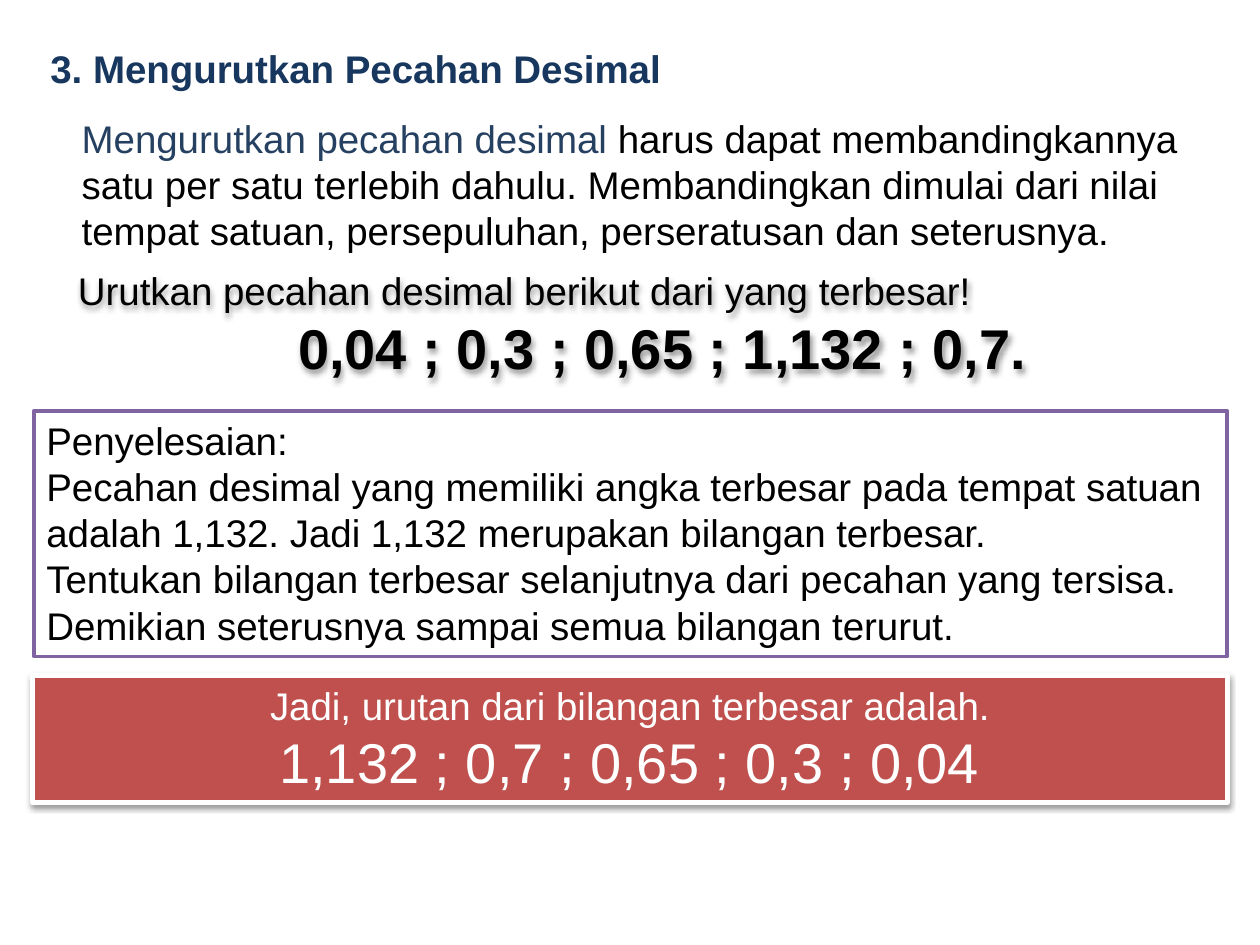
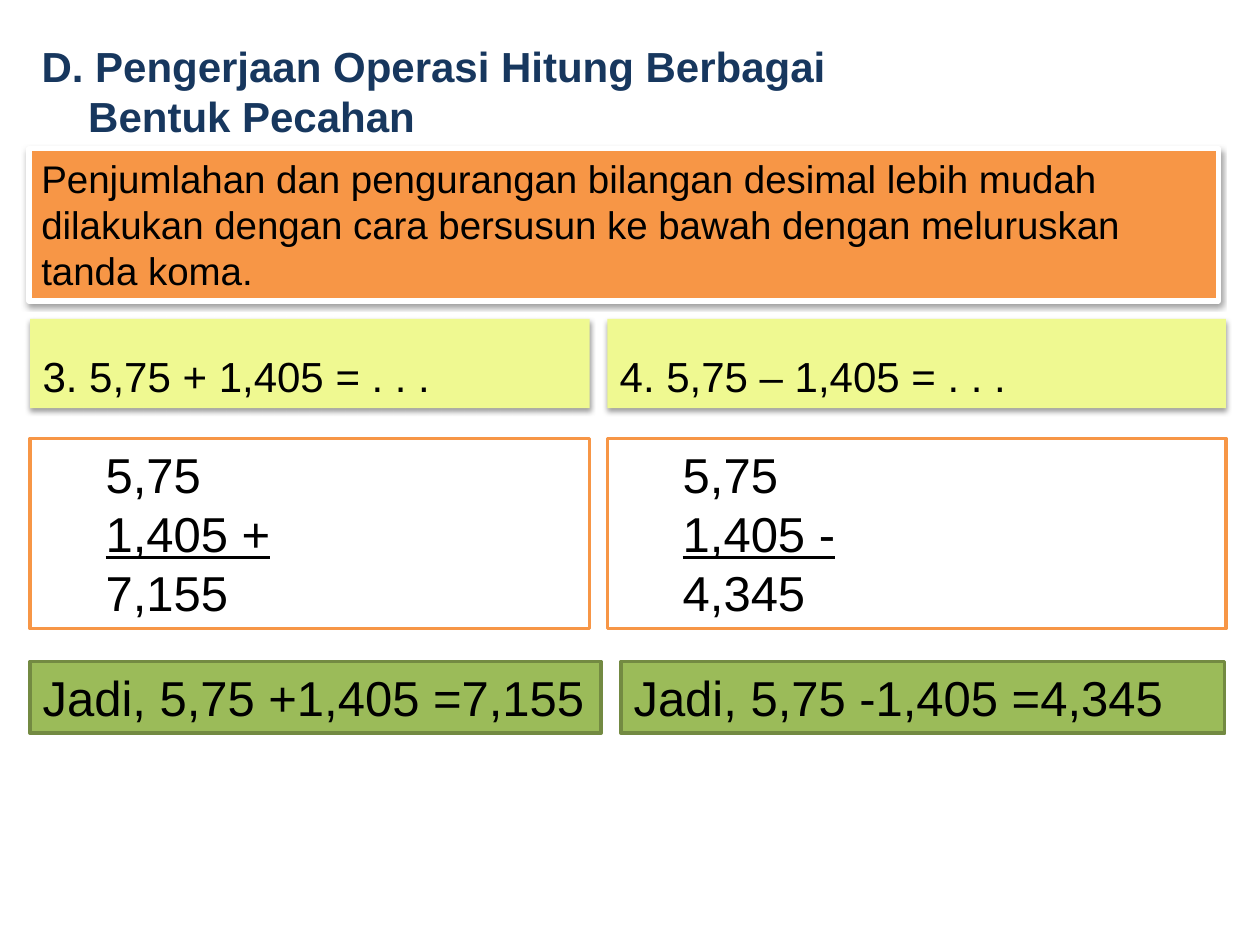
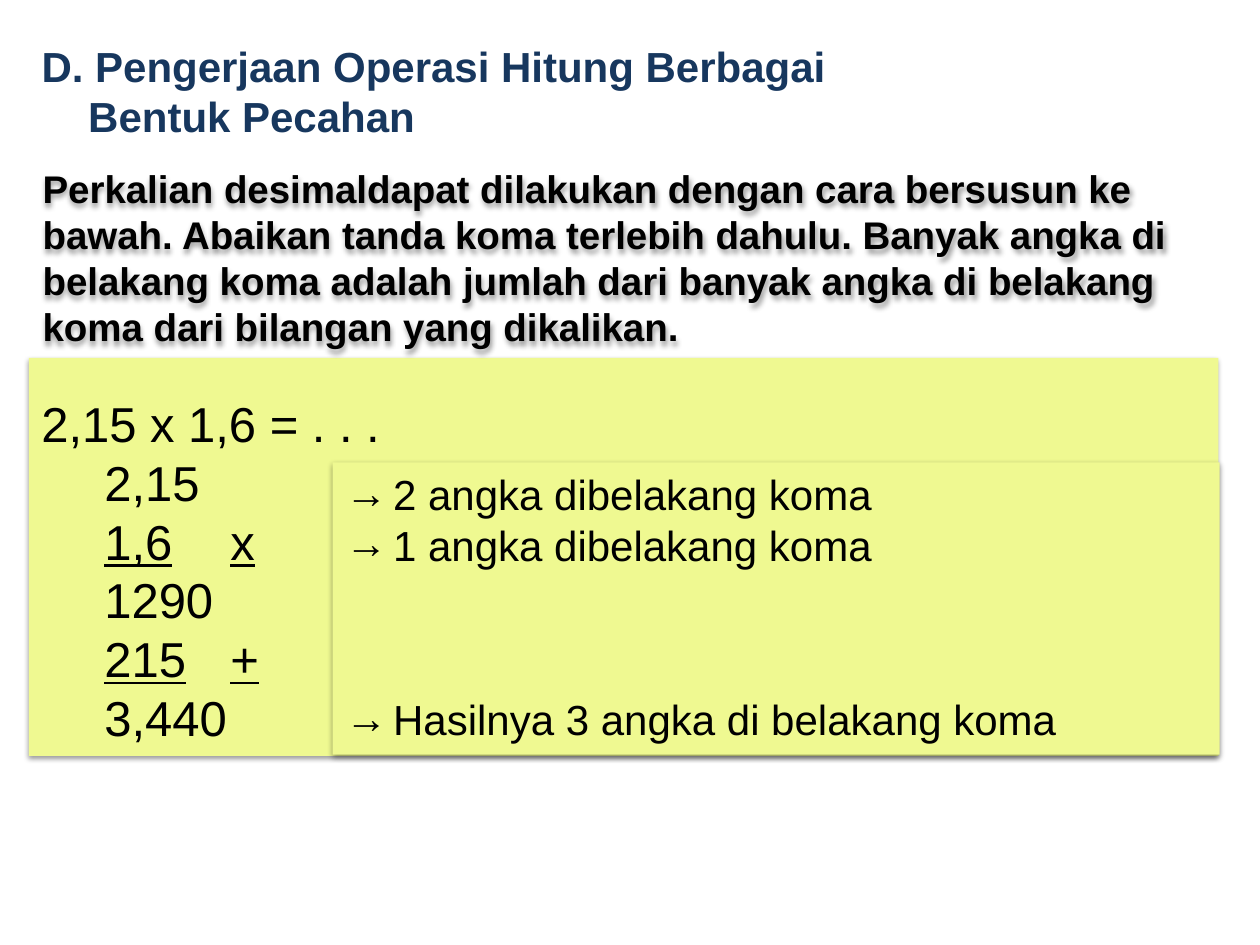
from collections import namedtuple

from lxml.etree import SubElement
from pptx import Presentation
from pptx.dml.color import RGBColor
from pptx.enum.shapes import MSO_SHAPE as Preset
from pptx.enum.text import MSO_ANCHOR as Anchor, MSO_AUTO_SIZE as AutoSize, PP_ALIGN as Align
from pptx.oxml.ns import qn
from pptx.util import Inches, Pt

COLORS = {
    "title": "17375E", "term": "254061", "text": "000000", "white": "FFFFFF",
    "purple": "8064A2", "red": "C0504D", "orange": "F79646",
    "yellow": "EFF991", "green": "9BBB59", "dark_green": "738A42",
}
FONT = "Arial"
COLUMNS, ROWS = 100, 75
WIDTH, HEIGHT = Inches(10), Inches(7.5)
CHAPTER = ["D. Pengerjaan Operasi Hitung Berbagai", "Bentuk Pecahan"]

# Boxes are in grid columns and rows; a Step is one line of written arithmetic
Box = namedtuple("Box", "left top width height")
Step = namedtuple("Step", "start text underline sign_at", defaults=(False, None))


def color(name):
    return RGBColor.from_string(COLORS[name])


def place(shape, box):
    shape.left, shape.width = (int(n * WIDTH / COLUMNS) for n in (box.left, box.width))
    shape.top, shape.height = (int(n * HEIGHT / ROWS) for n in (box.top, box.height))


def inside(box, left, top, width, height):
    """Box whose corner is counted from the corner of another box."""
    return Box(box.left + left, box.top + top, width, height)


def prepare_frame(shape):
    frame = shape.text_frame
    frame.word_wrap = True
    frame.auto_size = AutoSize.NONE
    frame.vertical_anchor = Anchor.TOP
    return frame


def style(paragraph, size, name="text", bold=False, align=Align.LEFT):
    paragraph.alignment = align
    paragraph.space_before = Pt(0)
    font = paragraph.font
    font.name, font.size, font.bold = FONT, Pt(size), bold
    font.color.rgb = color(name)


def write(shape, lines, size, **options):
    """Fill a shape with equally styled paragraphs and return them."""
    frame = prepare_frame(shape)
    paragraphs = []
    for number, line in enumerate(lines):
        paragraph = frame.add_paragraph() if number else frame.paragraphs[0]
        paragraph.text = line
        style(paragraph, size, **options)
        paragraphs.append(paragraph)
    return paragraphs


def add_shadow(shape):
    properties = shape._element.spPr
    for effects in properties.findall(qn("a:effectLst")):
        properties.remove(effects)
    effects = SubElement(properties, qn("a:effectLst"))
    shadow = SubElement(effects, qn("a:outerShdw"), blurRad=str(Pt(3.1)),
                        dist=str(Pt(1.6)), dir="5400000", rotWithShape="0")
    black = SubElement(shadow, qn("a:srgbClr"), val=COLORS["text"])
    SubElement(black, qn("a:alpha"), val="38000")


def panel(slide, box, fill, line=None, line_width=2, shadow=False):
    shape = slide.shapes.add_shape(Preset.RECTANGLE, 0, 0, 0, 0)
    place(shape, box)
    shape.shadow.inherit = False
    shape.fill.solid()
    shape.fill.fore_color.rgb = color(fill)
    if line:
        shape.line.color.rgb = color(line)
        shape.line.width = Pt(line_width)
    else:
        shape.line.fill.background()
    if shadow:
        add_shadow(shape)
    return shape


def shadowed_text(slide, box, lines, size, **options):
    shape = slide.shapes.add_textbox(0, 0, 0, 0)
    place(shape, box)
    add_shadow(shape)
    return write(shape, lines, size, **options)


def set_indent(paragraph, margin, first=0):
    properties = paragraph._p.get_or_add_pPr()
    properties.set("marL", str(Inches(margin)))
    properties.set("indent", str(Inches(first)))
    return properties


def add_title(slide, box, lines, size, indents):
    title = slide.shapes.title
    place(title, box)
    for paragraph, indent in zip(write(title, lines, size, name="title", bold=True), indents):
        set_indent(paragraph, indent)


def add_chapter_title(slide):
    add_title(slide, Box(2.3, 2.7, 70.5, 9.1), CHAPTER, 24, (0, 0.37))


def write_steps(frame, steps, size):
    """Write arithmetic lines, each one set on its own tab stops."""
    for number, step in enumerate(steps):
        is_first = number == 0 and not frame.paragraphs[0].runs
        paragraph = frame.paragraphs[0] if is_first else frame.add_paragraph()
        properties = set_indent(paragraph, 0)
        SubElement(properties, qn("a:buNone"))
        tabs = SubElement(properties, qn("a:tabLst"))
        for stop in filter(None, (step.start, step.sign_at)):
            SubElement(tabs, qn("a:tab"), pos=str(Inches(stop)), algn="l")
        paragraph.add_run().text = "\t"
        run = paragraph.add_run()
        run.text = step.text
        if step.underline:
            run.font.underline = True
        style(paragraph, size)


# Slide 1: ordering decimals
def ordering_slide(presentation):
    slide = presentation.slides.add_slide(presentation.slide_layouts[5])
    add_title(slide, Box(1.2, 3.1, 66.1, 4.7), ["3. Mengurutkan Pecahan Desimal"], 22, (0.18,))

    # Explanation with a coloured term
    intro = panel(slide, Box(5.5, 8.6, 94.8, 12.1), "white")
    paragraph = write(intro, ["Mengurutkan pecahan desimal "], 22)[0]
    paragraph.runs[0].font.color.rgb = color("term")
    paragraph.add_run().text = (
        "harus dapat membandingkannya satu per satu terlebih dahulu. Membandingkan dimulai "
        "dari nilai tempat satuan, persepuluhan, perseratusan dan seterusnya.")

    # Solution and result
    solution = panel(slide, Box(2.7, 32.6, 94.7, 19.5), "white", "purple")
    write(solution, [
        "Penyelesaian:",
        "Pecahan desimal yang memiliki angka terbesar pada tempat satuan adalah 1,132. "
        "Jadi 1,132 merupakan bilangan terbesar.",
        "Tentukan bilangan terbesar selanjutnya dari pecahan yang tersisa. "
        "Demikian seterusnya sampai semua bilangan terurut.",
    ], 22)
    result = panel(slide, Box(2.6, 53.6, 94.8, 10.1), "red", "white", 3, shadow=True)
    lines = write(result, ["Jadi, urutan dari bilangan terbesar adalah.",
                           "1,132 ; 0,7 ; 0,65 ; 0,3 ; 0,04"],
                  22, name="white", align=Align.CENTER)
    lines[1].font.size = Pt(32)

    # Question
    question = shadowed_text(slide, Box(5.2, 20.7, 94.8, 10.1), [
        "Urutkan pecahan desimal berikut dari yang terbesar!",
        "0,04 ; 0,3 ; 0,65 ; 1,132 ; 0,7."], 22)
    style(question[1], 32, bold=True, align=Align.CENTER)


# Slide 2: addition and subtraction
def worked_example(slide, box, exercise, second, total, answer, answer_left, answer_width):
    heading = panel(slide, inside(box, 0, 0, box.width, 7.1), "yellow", shadow=True)
    write(heading, [exercise], 24)[0].line_spacing = 1.5

    working = panel(slide, inside(box, 0, 9.5, box.width, 15.1), "white", "orange")
    write_steps(prepare_frame(working),
                [Step(1.29, "5,75"), Step(1.16, second, True), Step(1.29, total)], 28)

    conclusion = panel(slide, inside(box, answer_left, 27.2, answer_width, 5.7),
                       "green", "dark_green")
    write(conclusion, [answer], 28)


def addition_slide(presentation):
    slide = presentation.slides.add_slide(presentation.slide_layouts[5])
    add_chapter_title(slide)
    rule = panel(slide, Box(2.3, 11.8, 94.4, 12.1), "orange", "white", 3, shadow=True)
    write(rule, ["Penjumlahan dan pengurangan bilangan desimal lebih mudah dilakukan dengan "
                 "cara bersusun ke bawah dengan meluruskan tanda koma."], 22)
    worked_example(slide, Box(2.4, 25.3, 44.4, 32.9), "3. 5,75 + 1,405 = . . .",
                   "1,405 +", "7,155", "Jadi, 5,75 +1,405 =7,155", 0, 45.3)
    worked_example(slide, Box(48.2, 25.3, 49.1, 32.9), "4. 5,75 – 1,405 = . . .",
                   "1,405 -", "4,345", "Jadi, 5,75 -1,405 =4,345", 1.1, 47.9)


# Slide 3: multiplication
def multiplication(slide, box):
    working = panel(slide, box, "yellow", shadow=True)
    write(working, ["2,15 x 1,6 = . . ."], 28)[0].line_spacing = 1.5
    write_steps(working.text_frame, [
        Step(1.19, "2,15"),
        Step(1.19, "1,6\tx", True, 2.05),
        Step(1.19, "1290"),
        Step(1.05, "215\t+", True, 1.92),
        Step(1.19, "3,440"),
    ], 28)

    # Notes beside the working, in front of its panel
    notes = slide.placeholders[1]
    working._element.addnext(notes._element)
    place(notes, inside(box, 24.1, 8.3, 70.4, 23.2))
    notes.fill.solid()
    notes.fill.fore_color.rgb = color("yellow")
    add_shadow(notes)
    paragraphs = write(notes, ["2 angka dibelakang koma", "1 angka dibelakang koma",
                               "Hasilnya 3 angka di belakang koma"], 24)
    for paragraph in paragraphs:
        properties = set_indent(paragraph, 0.38, -0.38)
        bullet = properties.makeelement(qn("a:buChar"), {"char": "→"})
        properties.find(qn("a:defRPr")).addprevious(bullet)
    paragraphs[-1].space_before = Pt(71)


def multiplication_slide(presentation):
    slide = presentation.slides.add_slide(presentation.slide_layouts[1])
    add_chapter_title(slide)
    multiplication(slide, Box(2.3, 28.4, 94.4, 31.6))
    shadowed_text(slide, Box(2.4, 12.6, 94.4, 15.8), [
        "Perkalian desimaldapat dilakukan dengan cara bersusun ke bawah. Abaikan tanda koma "
        "terlebih dahulu. Banyak angka di belakang koma adalah jumlah dari banyak angka di "
        "belakang koma dari bilangan yang dikalikan."], 22, bold=True)


def main():
    presentation = Presentation()
    presentation.slide_width, presentation.slide_height = WIDTH, HEIGHT
    ordering_slide(presentation)
    addition_slide(presentation)
    multiplication_slide(presentation)
    presentation.save("out.pptx")


if __name__ == "__main__":
    main()
